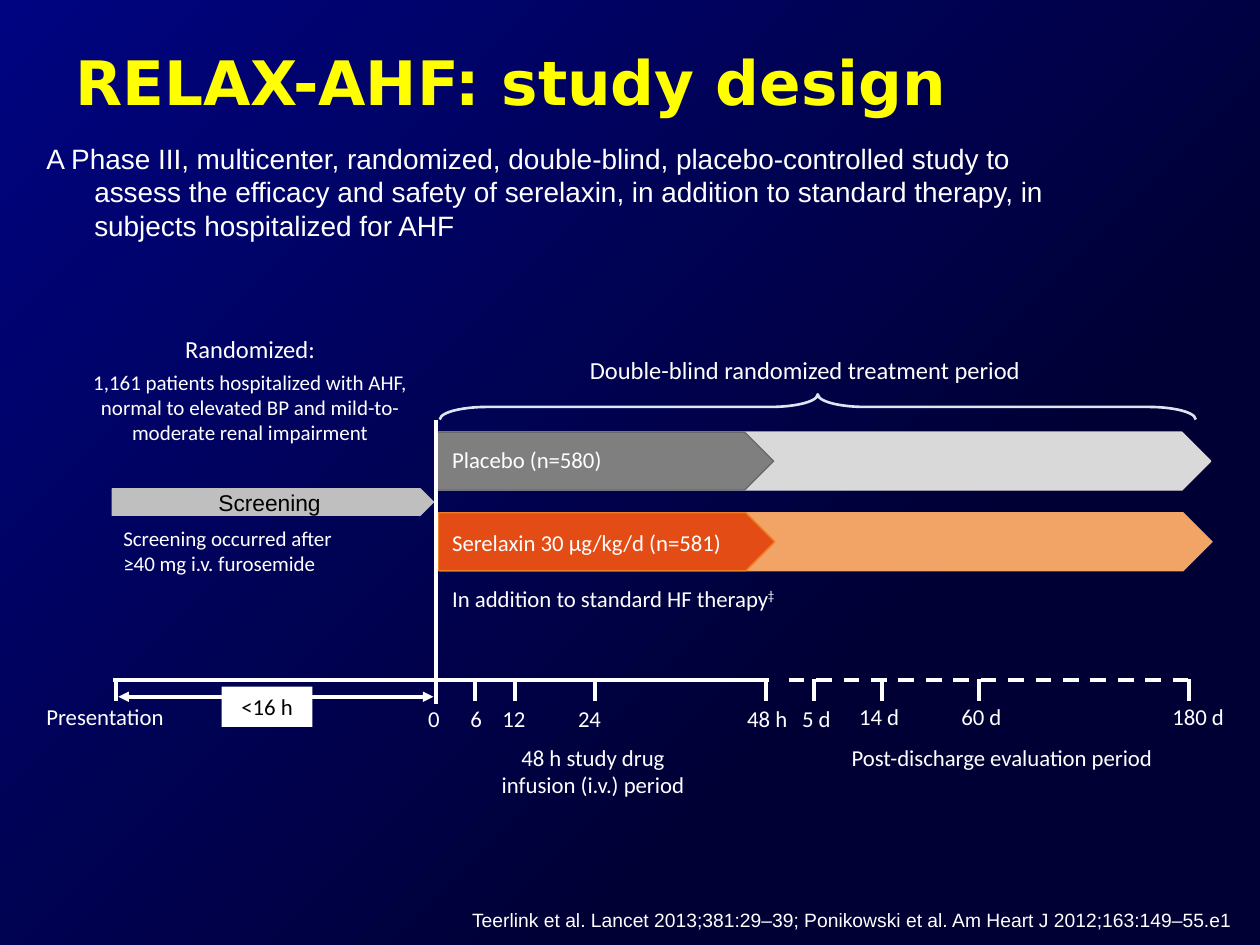
from lxml import etree
from pptx import Presentation
from pptx import util as u
from pptx.dml.color import RGBColor
from pptx.enum import dml, shapes, text
from pptx.oxml import parse_xml
from pptx.oxml.ns import nsdecls, qn

W, H = 10, 7.5
THEME = {
    "white": "FFFFFF", "black": "000000", "yellow": "FFFF00",
    "pale": "D9D9D9", "gray": "7F7F7F", "slate": "69676D", "silver": "BFBFBF",
    "peach": "F1A465", "red": "E44C16", "orange": "EC8026", "ice": "DCE6F2",
    "night": "000035", "navy": "000480",
    "sans": "Calibri", "plain": "Arial", "head": "DejaVu Sans",
    "title": 35, "lead": 16, "big": 14, "mid": 13, "small": 12, "cite": 11,
}
MID, LEFT, RIGHT = text.PP_ALIGN.CENTER, text.PP_ALIGN.LEFT, text.PP_ALIGN.RIGHT
TOP, LOW = text.MSO_ANCHOR.TOP, text.MSO_ANCHOR.BOTTOM
KIND = shapes.MSO_SHAPE

LEAD = ("A Phase III, multicenter, randomized, double-blind, placebo-controlled "
        "study to assess the efficacy and safety of serelaxin, in addition to "
        "standard therapy, in subjects hospitalized for AHF")
WHO = ("1,161 patients hospitalized with AHF, normal to elevated BP and "
       "mild-to-moderate renal impairment")
CITE = ("Teerlink et al. Lancet 2013;381:29–39; Ponikowski et al. "
        "Am Heart J 2012;163:149–55.e1")

ARMS = [
    (3.48, 3.43, "pale", "pale", "gray", "slate"),
    (3.49, 4.07, "peach", "peach", "red", "orange"),
]
NOTES = [
    ((0.5, 0.3, 8.11, 1.25), "RELAX-AHF: study design",
     {"size": "title", "face": "head", "color": "yellow", "bold": True}),
    ((0.27, 1.07, 8.2, 0.95), LEAD,
     {"size": "lead", "face": "plain", "hang": 0.38}),
    ((6.26, 5.85, 3.38, 0.32), "Post-discharge evaluation period", {"align": MID}),
    ((3.49, 3.49, 1.55, 0.32), "Placebo (n=580)", {"wrap": False}),
    ((3.49, 4.15, 2.56, 0.32), "Serelaxin 30 µg/kg/d (n=581)", {"wrap": False}),
    ((3.49, 4.59, 2.82, 0.32), "In addition to standard HF therapy",
     {"wrap": False, "mark": "‡"}),
    ((3.3, 5.54, 3.55, 0.32), "0\t6\t12\t24\t48 h\t5 d",
     {"tabs": (0.38, 0.68, 1.28, 2.69, 3.08)}),
    ((6.72, 5.53, 3.36, 0.32), "14 d\t60 d\t180 d", {"tabs": (0.97, 2.69)}),
    ((0.27, 5.53, 1.34, 0.32), "Presentation", {}),
    ((3.87, 5.85, 1.67, 0.54), "48 h study drug\vinfusion (i.v.) period",
     {"align": MID, "wrap": False}),
    ((4.46, 2.77, 3.86, 0.34), "Double-blind randomized treatment period",
     {"size": "big", "align": MID}),
    ((0.88, 4.12, 2.55, 0.51), "Screening occurred after\v≥40 mg i.v. furosemide",
     {"size": "small"}),
    ((2.22, 7.15, 7.66, 0.29), CITE,
     {"size": "cite", "face": "plain", "align": RIGHT, "anchor": LOW}),
]
AXIS, TICK = 5.39, 0.17
TICKS = [0.92, 3.77, 4.09, 4.72, 6.08, 6.46, 7, 7.77, 9.44]

deck = Presentation()
deck.slide_width, deck.slide_height = u.Inches(W), u.Inches(H)
page = deck.slides.add_slide(deck.slide_layouts[6]).shapes


def inch(vals):
    return [u.Inches(v) for v in vals]


def hue(name):
    return RGBColor.from_string(THEME[name])


def apply(obj, vals):
    for key, val in vals.items():
        setattr(obj, key, val)


def write(para, words, size="mid", face="sans", color="white", bold=False,
          align=LEFT, tabs=(), hang=0, mark="", after=0):
    props = para._p.get_or_add_pPr()
    if hang:
        props.set("marL", str(u.Inches(hang)))
        props.set("indent", str(-u.Inches(hang)))
    if tabs:
        stops = etree.SubElement(props, qn("a:tabLst"))
        for pos in tabs:
            etree.SubElement(stops, qn("a:tab"), pos=str(u.Inches(pos)), algn="ctr")
    para.text = words
    apply(para, {"alignment": align, "space_before": u.Pt(0),
                 "space_after": u.Pt(after)})
    if mark:
        run = para.add_run()
        run.text = mark
        run.font._element.set("baseline", "30000")
    for run in para.runs:
        apply(run.font, {"size": u.Pt(THEME[size]), "name": THEME[face], "bold": bold})
        run.font.color.rgb = hue(color)


def note(box, words, wrap=True, anchor=TOP, **fmt):
    frame = page.add_textbox(*inch(box)).text_frame
    apply(frame, {"word_wrap": wrap, "vertical_anchor": anchor})
    write(frame.paragraphs[0], words, **fmt)
    return frame


def form(kind, box, fill=None, edge=None, width=0.75):
    item = page.add_shape(kind, *inch(box))
    item.shadow.inherit = False
    for part, name in ((item.fill, fill), (item.line.fill, edge)):
        if name:
            part.solid()
            part.fore_color.rgb = hue(name)
        else:
            part.background()
    if edge:
        item.line.width = u.Pt(width)
    return item


def rule(x1, y1, x2, y2, width=2.25, dash=None, tips=()):
    item = page.add_connector(shapes.MSO_CONNECTOR.STRAIGHT, *inch((x1, y1, x2, y2)))
    item.line.color.rgb = hue("white")
    apply(item.line, {"width": u.Pt(width), "dash_style": dash})
    for tip in tips:
        etree.SubElement(item.line._get_or_add_ln(), qn(tip), type="triangle")
    etree.SubElement(item._element.spPr, qn("a:effectLst"))


def sky():
    item = form(KIND.RECTANGLE, (0, 0, W, H))
    item.rotation = 180
    stops = "".join(
        f'<a:gs pos="{pos}"><a:srgbClr val="{THEME[name]}"/></a:gs>'
        for pos, name in ((30000, "night"), (100000, "navy")))
    grad = parse_xml(
        f'<a:gradFill {nsdecls("a")} rotWithShape="1"><a:gsLst>{stops}</a:gsLst>'
        '<a:path path="circle"><a:fillToRect l="100000" t="100000"/></a:path>'
        '</a:gradFill>')
    props = item._element.spPr
    props.replace(props.find(qn("a:noFill")), grad)


sky()
for x, y, fill, edge, dark, rim in ARMS:
    form(KIND.PENTAGON, (x, y, 6.13, 0.46), fill, edge)
    form(KIND.PENTAGON, (x - 0.01, y, 2.67, 0.46), dark, rim)

screen = form(KIND.PENTAGON, (0.89, 3.88, 2.55, 0.21), "silver", "silver")
apply(screen.text_frame, dict(zip(
    ("margin_left", "margin_top", "margin_right", "margin_bottom"),
    inch((0.08, 0.04, 0.08, 0.04)))))
write(screen.text_frame.paragraphs[0], "Screening", face="plain", color="black", align=MID)

brace = form(KIND.LEFT_BRACE, (6.39, 0.23, 0.2, 6), edge="ice", width=1.5)
brace.rotation = 90
brace.adjustments[0] = 1.88

rule(0.9, 5.4, 6.1, 5.4)
rule(6.26, 5.4, 9.49, 5.4, dash=dml.MSO_LINE.DASH)
rule(3.46, 3.33, 3.46, 5.59)
for x in TICKS:
    rule(x, AXIS, x, AXIS + TICK)
rule(0.94, 5.53, 3.44, 5.53, 2, tips=("a:headEnd", "a:tailEnd"))

for box, words, fmt in NOTES:
    note(box, words, **fmt)
group = note((0.52, 2.6, 2.93, 1), "Randomized:", size="big", align=MID, after=3.5)
write(group.add_paragraph(), WHO, size="small", align=MID)

delay = form(KIND.RECTANGLE, (1.76, 5.45, 0.72, 0.32), "white")
delay.text_frame.vertical_anchor = TOP
write(delay.text_frame.paragraphs[0], "<16 h", color="black", align=MID)

deck.save("out.pptx")
